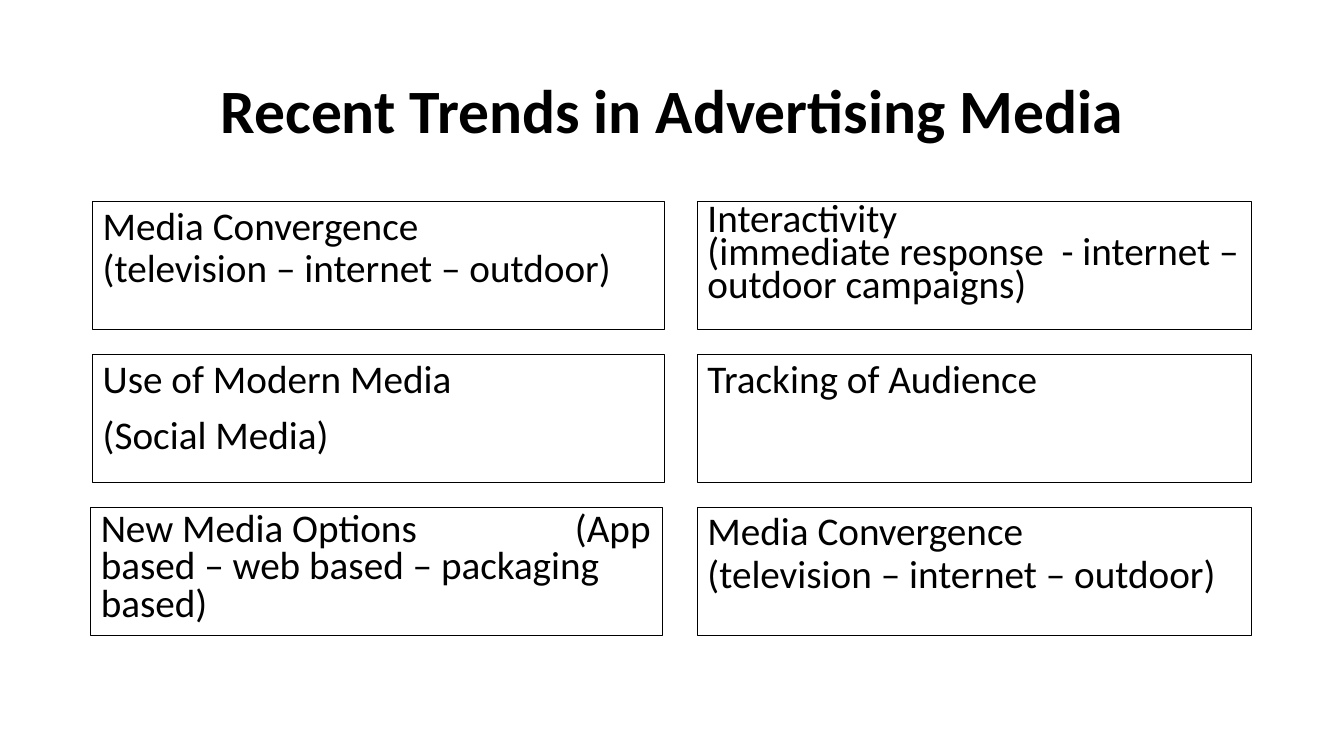
from dataclasses import dataclass

import pptx
import pptx.dml.color
import pptx.enum.shapes
import pptx.enum.text
import pptx.oxml
import pptx.oxml.ns
import pptx.util

Cm, Pt = pptx.util.Cm, pptx.util.Pt
Align, Anchor = pptx.enum.text.PP_ALIGN, pptx.enum.text.MSO_ANCHOR


@dataclass(frozen=True)
class Theme:
    font: str = "Calibri"
    ink: pptx.dml.color.RGBColor = pptx.dml.color.RGBColor(0, 0, 0)
    title_size: int = 44
    trend_size: int = 28
    outline: float = 0.75


theme = Theme()


def write(frame, text, size, spacing, align=Align.LEFT, bold=False, before=0, tab=None):
    """Fill a text frame, with an optional left tab stop."""
    frame.word_wrap = True
    frame.text = text
    for paragraph in frame.paragraphs:
        paragraph.alignment = align
        paragraph.line_spacing = spacing
        paragraph.space_before = Pt(before)
        if tab:
            paragraph._p.get_or_add_pPr().append(pptx.oxml.parse_xml(
                f'<a:tabLst {pptx.oxml.ns.nsdecls("a")}>'
                f'<a:tab pos="{tab}" algn="l"/></a:tabLst>'))
        paragraph.font.name = theme.font
        paragraph.font.size = Pt(size)
        paragraph.font.bold = bold
        paragraph.font.color.rgb = theme.ink


deck = pptx.Presentation()
deck.slide_width, deck.slide_height = Cm(33.87), Cm(19.05)
slide = deck.slides.add_slide(deck.slide_layouts[6])

title = slide.shapes.add_textbox(Cm(2.34), Cm(1.02), Cm(29.21), Cm(3.68)).text_frame
title.vertical_anchor = Anchor.MIDDLE
write(title, "Recent Trends in Advertising Media", theme.title_size, 0.9,
      Align.CENTER, bold=True)

first_top, row_pitch, trend_height = 5.08, 3.85, 3.23
left_width, right_left, right_width = 14.4, 17.58, 13.97
convergence = "Media Convergence\v(television – internet – outdoor)"

# Each row: left edge, then text and line spacing of the left and right trends
rows = [
    (2.34, (convergence, 0.9),
     ("Interactivity\v(immediate response  - internet – outdoor campaigns)", 0.7)),
    (2.34, ("Use of Modern Media\n(Social Media)", 0.9),
     ("Tracking of Audience", 0.9)),
    (2.29, ("New Media Options\t(App based – web based – packaging based)", 0.8),
     (convergence, 0.9)),
]

for row, (row_left, left_trend, right_trend) in enumerate(rows):
    columns = [(row_left, left_width, left_trend), (right_left, right_width, right_trend)]
    for left, width, (text, spacing) in columns:
        trend = slide.shapes.add_shape(
            pptx.enum.shapes.MSO_SHAPE.RECTANGLE,
            Cm(left), Cm(first_top + row * row_pitch), Cm(width), Cm(trend_height))
        trend.shadow.inherit = False
        trend.fill.background()
        trend.line.color.rgb = theme.ink
        trend.line.width = Pt(theme.outline)
        trend.text_frame.vertical_anchor = Anchor.TOP
        write(trend.text_frame, text, theme.trend_size, spacing, before=10,
              tab=Cm(11.95) if "\t" in text else None)

deck.save("out.pptx")
